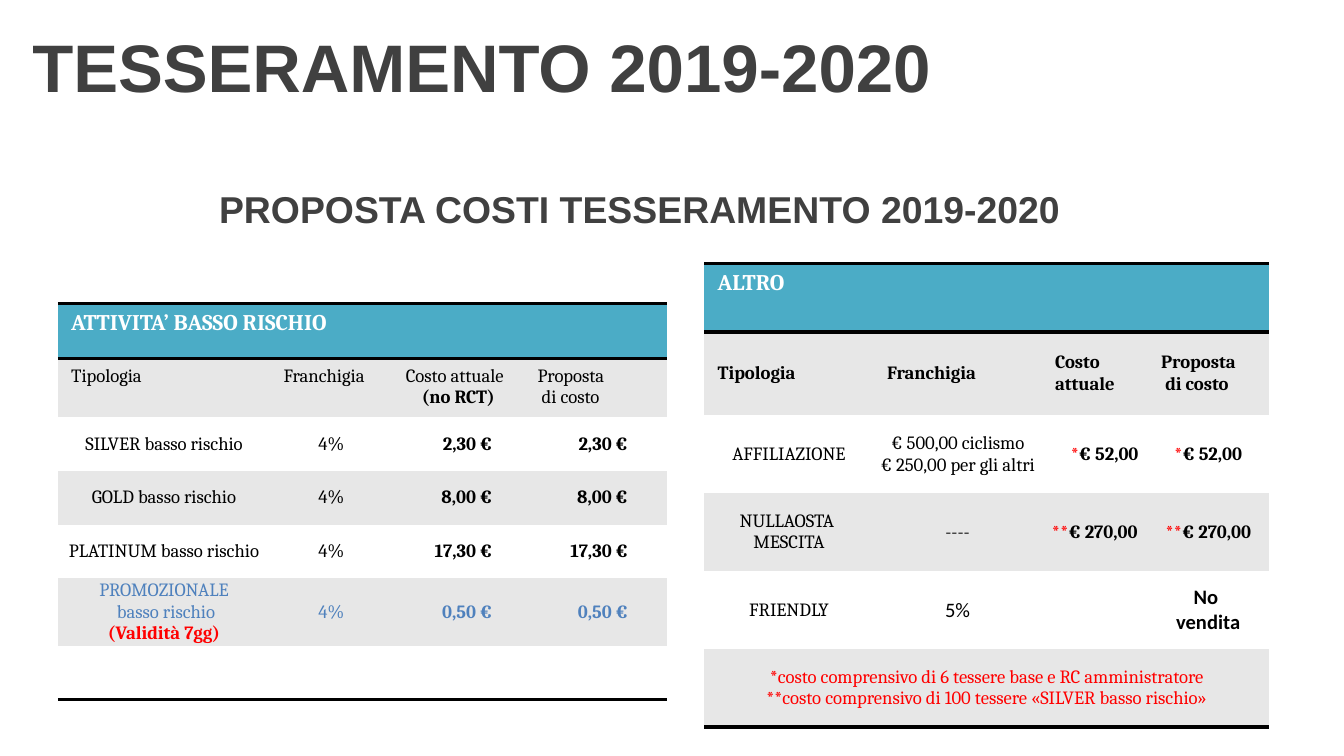
from lxml import etree
from pptx import Presentation
from pptx.dml.color import RGBColor
from pptx.enum.text import MSO_ANCHOR, PP_ALIGN
from pptx.oxml.ns import qn
from pptx.util import Inches, Pt

LEFT, CENTER, RIGHT = PP_ALIGN.LEFT, PP_ALIGN.CENTER, PP_ALIGN.RIGHT
TOP, MIDDLE = MSO_ANCHOR.TOP, MSO_ANCHOR.MIDDLE
PLAIN_TABLE = "{2D5ABB26-0587-4C30-8999-92F81FD0307C}"


def style(size, color, bold=False, name="Cambria"):
    return {"size": Pt(size), "name": name, "bold": bold, "color": color}


THEME = {
    "fill": {"head": "4BACC6", "odd": "E7E7E7", "even": "FFFFFF"},
    "rule": {"color": "000000", "width": Pt(2)},
    "text": {
        "title": style(36, "404040", True, "Arial"),
        "subtitle": style(20, "404040", True, "Arial"),
        "head": style(12, "FFFFFF", True),
        "body": style(10, "000000"),
        "bold": style(10, "000000", True),
        "blue": style(10, "4F81BD"),
        "blue_bold": style(10, "4F81BD", True),
        "red": style(10, "FF0000"),
        "red_bold": style(10, "FF0000", True),
        "rate": style(11, "000000", False, "Calibri"),
        "no_sale": style(11, "000000", True, "Calibri"),
    },
}
ROOMY = (0.1, 0.05, 0.1, 0.05)
TIGHT = (0, 0, 0, 0)


def format_font(font, key):
    for attr, value in THEME["text"][key].items():
        if attr == "color":
            font.color.rgb = RGBColor.from_string(value)
        else:
            setattr(font, attr, value)


def write(tf, lines, align):
    """Each line is a list of (text, style) runs."""
    for i, runs in enumerate(lines):
        p = tf.paragraphs[0] if i == 0 else tf.add_paragraph()
        p.alignment = align
        for text, key in runs:
            r = p.add_run()
            r.text = text
            format_font(r.font, key)


def same(key, *texts):
    return [[(text, key)] for text in texts]


def fill_cell(cell, lines, align=CENTER, anchor=MIDDLE, inset=TIGHT):
    sides = ("margin_left", "margin_top", "margin_right", "margin_bottom")
    for side, value in zip(sides, inset):
        setattr(cell, side, Inches(value))
    cell.vertical_anchor = anchor
    write(cell.text_frame, lines, align)


def rule_row(table, row, *edges):
    """Draw horizontal rules; edges run from bottom to top (lnB, lnT)."""
    for col in range(len(table.columns)):
        tc_pr = table.cell(row, col)._tc.get_or_add_tcPr()
        for edge in edges:
            ln = etree.Element(qn("a:" + edge), w=str(THEME["rule"]["width"]))
            fill = etree.SubElement(ln, qn("a:solidFill"))
            etree.SubElement(fill, qn("a:srgbClr"), val=THEME["rule"]["color"])
            tc_pr.insert(0, ln)


def add_price_table(s, x, y, cols, rows, heading):
    """Add a striped table with a merged heading row and black rules."""
    frame = s.shapes.add_table(len(rows), len(cols), Inches(x), Inches(y),
                               Inches(sum(cols)), Inches(sum(rows)))
    table = frame.table
    table.first_row = table.horz_banding = False
    table._tbl.tblPr.find(qn("a:tableStyleId")).text = PLAIN_TABLE
    for col, width in zip(table.columns, cols):
        col.width = Inches(width)
    for i, height in enumerate(rows):
        table.rows[i].height = Inches(height)
        band = "head" if i == 0 else "odd" if i % 2 else "even"
        for cell in table.rows[i].cells:
            cell.fill.solid()
            cell.fill.fore_color.rgb = RGBColor.from_string(THEME["fill"][band])
    table.cell(0, 0).merge(table.cell(0, len(cols) - 1))
    fill_cell(table.cell(0, 0), same("head", heading), LEFT, TOP, ROOMY)
    rule_row(table, 0, "lnB", "lnT")
    rule_row(table, len(rows) - 1, "lnB")
    return table


def add_titles(s, x, y, w):
    title = s.shapes.title
    title.left, title.top = Inches(x), Inches(y)
    title.width, title.height = Inches(w), Inches(0.97)
    sub = s.shapes.add_textbox(Inches(x + 0.43), Inches(y + 1.24),
                               Inches(8.66), Inches(0.63))
    parts = ((title, "TESSERAMENTO 2019-2020", "title", LEFT),
             (sub, "PROPOSTA COSTI TESSERAMENTO 2019-2020", "subtitle", CENTER))
    for sp, text, key, align in parts:
        tf = sp.text_frame
        tf.word_wrap = True
        tf.vertical_anchor = MIDDLE
        write(tf, same(key, text), align)
    title.text_frame.margin_left = Inches(0.24)


def add_low_risk(s, x, y):
    table = add_price_table(s, x, y, [1.58, 0.91, 0.98, 1.06],
                            [0.41] * 2 + [0.4] * 5, "ATTIVITA’ BASSO RISCHIO")
    # Column headings
    headings = (same("body", "Tipologia"), same("body", "Franchigia"),
                same("body", "Costo attuale") + same("bold", "(no RCT)"),
                same("body", "Proposta", " di costo"))
    for col, lines in enumerate(headings):
        fill_cell(table.cell(1, col), lines, LEFT, TOP, ROOMY)
    table.cell(1, 2).text_frame.paragraphs[1].alignment = CENTER

    # Membership types, with the same price in both cost columns
    promo = (same("blue", "PROMOZIONALE", " basso rischio")
             + same("red_bold", "(Validità 7gg)"))
    types = ((same("body", "SILVER basso rischio"), "2,30 €", "body", "bold"),
             (same("body", "GOLD basso rischio"), "8,00 €", "body", "bold"),
             (same("body", "PLATINUM basso rischio"), "17,30 €", "body", "bold"),
             (promo, "0,50 €", "blue", "blue_bold"))
    for row, (name, price, key, price_key) in enumerate(types, 2):
        fill_cell(table.cell(row, 0), name)
        fill_cell(table.cell(row, 1), same(key, "4%"))
        for col, gap in ((2, 0.24), (3, 0.29)):
            fill_cell(table.cell(row, col), same(price_key, price), RIGHT,
                      inset=(0, 0, gap, 0))
    # Closing empty row
    for cell in table.rows[6].cells:
        format_font(cell.text_frame.paragraphs[0].font, "body")


def add_other(s, x, y):
    table = add_price_table(s, x, y, [1.26, 1.25, 0.79, 0.9],
                            [0.51, 0.62] + [0.58] * 4, "ALTRO")
    # Column headings
    headings = (["Tipologia"], ["Franchigia"], ["Costo", "attuale"],
                ["Proposta", " di costo"])
    for col, texts in enumerate(headings):
        fill_cell(table.cell(1, col), same("bold", *texts), LEFT, MIDDLE, ROOMY)

    # Items, with starred prices
    fee = [[("*", "red_bold"), ("€ 52,00", "bold")]]
    permit = [[("**", "red_bold"), ("€ 270,00", "bold")]]
    items = (
        (same("body", "AFFILIAZIONE"),
         same("body", "€ 500,00 ciclismo", "€ 250,00 per gli altri"), fee, fee),
        (same("body", "NULLAOSTA ", "MESCITA"), same("body", "----"),
         permit, permit),
        (same("body", "FRIENDLY"), same("rate", "5%"), [],
         same("no_sale", "No ", "vendita")),
    )
    for row, cells in enumerate(items, 2):
        for col, lines in enumerate(cells):
            fill_cell(table.cell(row, col), lines)
    current_fee = table.cell(2, 2)
    current_fee.margin_right = Inches(0.07)
    current_fee.text_frame.paragraphs[0].alignment = RIGHT

    # Footnotes
    table.cell(5, 0).merge(table.cell(5, 3))
    fill_cell(table.cell(5, 0), same(
        "red", "*costo comprensivo di 6 tessere base e RC amministratore",
        "**costo comprensivo di 100 tessere «SILVER basso rischio»"))


def main():
    prs = Presentation()
    # Widescreen, 16:9
    prs.slide_width, prs.slide_height = Inches(10), Inches(10 * 9 / 16)
    s = prs.slides.add_slide(prs.slide_layouts[5])
    add_titles(s, 0, 0, 10)
    add_low_risk(s, 0.43, 2.26)
    add_other(s, 5.24, 1.96)
    prs.save("out.pptx")


if __name__ == "__main__":
    main()
